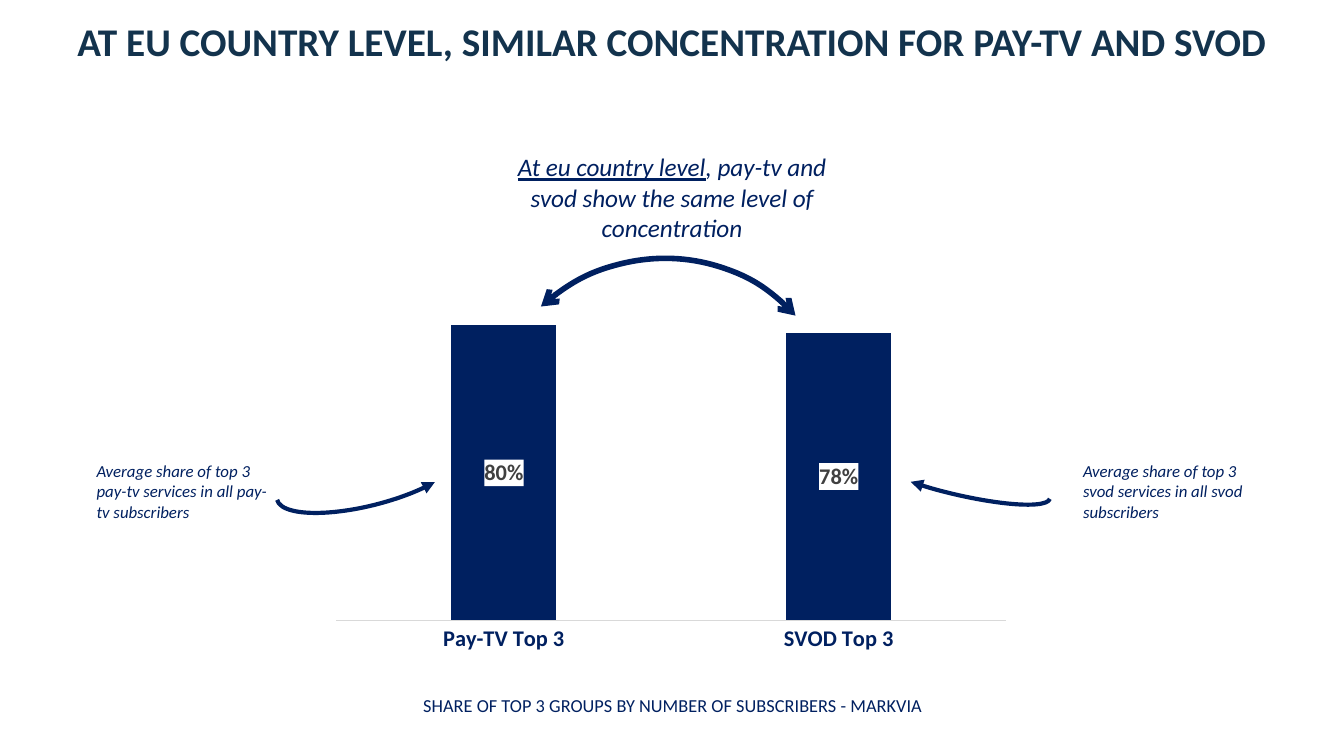
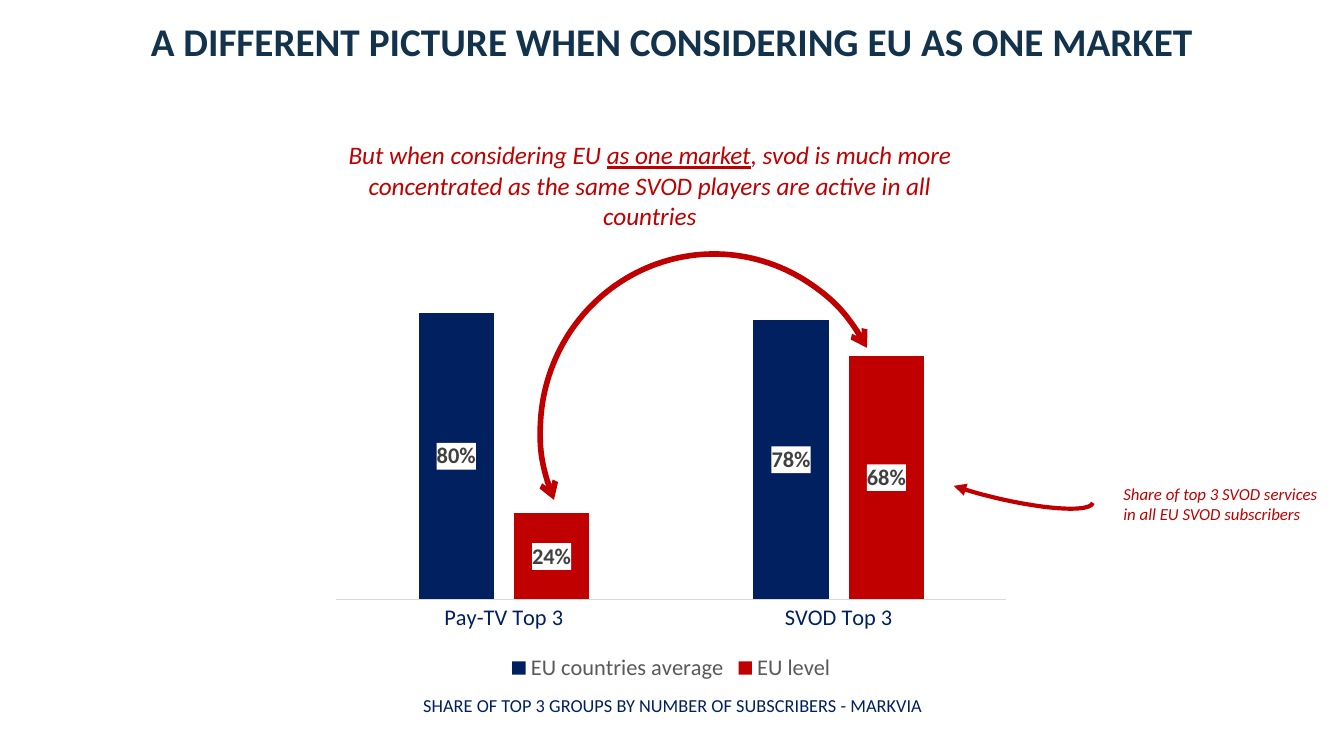
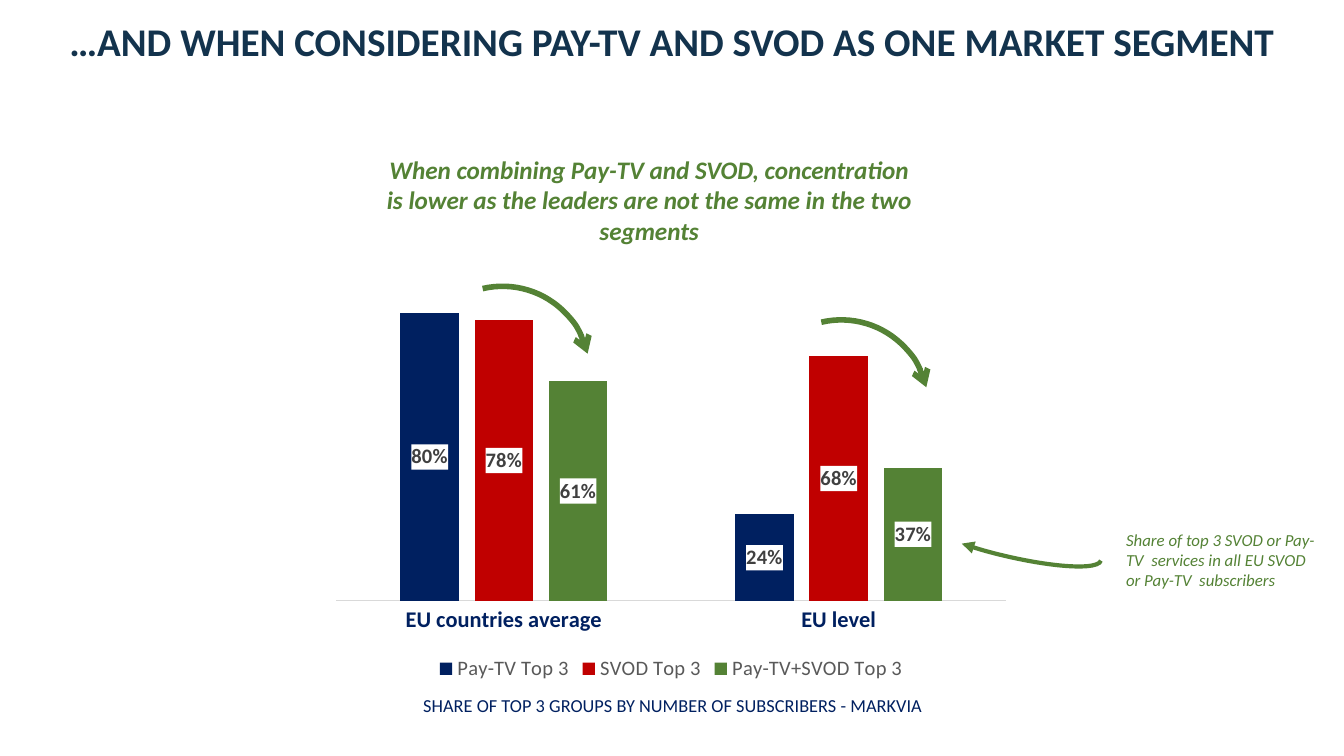
import collections

import lxml.etree
import pptx
import pptx.chart.data
import pptx.dml.color
import pptx.enum.chart
import pptx.enum.shapes
import pptx.enum.text
import pptx.oxml
import pptx.oxml.ns
import pptx.util

NAVY = pptx.dml.color.RGBColor(0x00, 0x20, 0x60)
RED = pptx.dml.color.RGBColor(0xC0, 0x00, 0x00)
GREEN = pptx.dml.color.RGBColor(0x54, 0x82, 0x35)
TITLE_BLUE = pptx.dml.color.RGBColor(0x13, 0x33, 0x4D)
LABEL_GREY = pptx.dml.color.RGBColor(0x40, 0x40, 0x40)
LEGEND_GREY = pptx.dml.color.RGBColor(0x59, 0x59, 0x59)
AXIS_GREY = pptx.dml.color.RGBColor(0xD9, 0xD9, 0xD9)
WHITE = pptx.dml.color.RGBColor(0xFF, 0xFF, 0xFF)

FONT = "Calibri"
EMU_PER_PX = 4572
CENTER = pptx.enum.text.PP_ALIGN.CENTER
LEFT = pptx.enum.text.PP_ALIGN.LEFT
SERIES_COLORS = (NAVY, RED, GREEN)
SWEEP = (119.491, 0)

Box = collections.namedtuple("Box", "left top width height")
Arc = collections.namedtuple("Arc", "box rotation angles flipped", defaults=(None, False))

SLIDE = Box(0, 0, 2000, 1125)
TITLE = Box(0, 16, 2000, 90)
FOOTER = Box(194, 1020, 1614, 60)
CHART = Box(480, 400, 1038, 622)


def px(length):
    """Turn a length in px into EMU."""
    return pptx.util.Emu(length * EMU_PER_PX)


def emu(box):
    """Turn a box in px into four EMU lengths."""
    return [px(length) for length in box]


def within(box, part):
    """Place a part relative to the corner of a box."""
    return Box(box.left + part.left, box.top + part.top, part.width, part.height)


def style_font(font, size, color, bold=False, italic=False):
    """Give a font its face, size, colour and weight."""
    font.name = FONT
    font.size = pptx.util.Pt(size)
    font.color.rgb = color
    font.bold = bold
    font.italic = italic


def write_runs(text_frame, runs, alignment, size, color, bold=False, italic=False):
    """Write one paragraph from (text, underlined) runs."""
    text_frame.word_wrap = True
    paragraph = text_frame.paragraphs[0]
    paragraph.alignment = alignment
    for text, underlined in runs:
        run = paragraph.add_run()
        run.text = text
        style_font(run.font, size, color, bold, italic)
        if underlined:
            run.font.underline = True


def add_title(slide, box, text):
    """Fill and place the title placeholder."""
    title = slide.shapes.title
    title.left, title.top, title.width, title.height = emu(box)
    write_runs(title.text_frame, [(text, False)], CENTER, 21, TITLE_BLUE, bold=True)
    title.text_frame.auto_size = pptx.enum.text.MSO_AUTO_SIZE.SHAPE_TO_FIT_TEXT
    title.text_frame.vertical_anchor = pptx.enum.text.MSO_ANCHOR.TOP


def add_text(slide, box, runs, alignment, size, color, bold=False):
    """Add an italic text box that grows with its text."""
    text_frame = slide.shapes.add_textbox(*emu(box)).text_frame
    write_runs(text_frame, runs, alignment, size, color, bold, italic=True)
    text_frame.auto_size = pptx.enum.text.MSO_AUTO_SIZE.SHAPE_TO_FIT_TEXT


def add_footer(slide, box):
    """Add the white band naming the measure and its provider."""
    band = slide.shapes.add_shape(pptx.enum.shapes.MSO_SHAPE.RECTANGLE, *emu(box))
    band.shadow.inherit = False
    band.fill.solid()
    band.fill.fore_color.rgb = WHITE
    band.line.color.rgb = WHITE
    band.line.width = pptx.util.Pt(0.25)
    text_frame = band.text_frame
    text_frame.margin_left = text_frame.margin_right = px(4)
    text_frame.margin_top = text_frame.margin_bottom = px(4)
    text_frame.vertical_anchor = pptx.enum.text.MSO_ANCHOR.MIDDLE
    text = "SHARE OF TOP 3 GROUPS BY NUMBER OF SUBSCRIBERS - MARKVIA"
    write_runs(text_frame, [(text, False)], CENTER, 9.8, NAVY)


def add_arc(slide, arc, color, weight, head=None, tail=None):
    """Add a curved arrow with the given ends."""
    shape = slide.shapes.add_shape(pptx.enum.shapes.MSO_SHAPE.ARC, *emu(arc.box))
    shape.shadow.inherit = False
    shape.fill.background()
    shape.line.color.rgb = color
    shape.line.width = pptx.util.Pt(weight)
    shape.rotation = arc.rotation
    for index, angle in enumerate(arc.angles or ()):
        shape.adjustments[index] = angle
    if arc.flipped:
        shape._element.spPr.get_or_add_xfrm().set("flipV", "1")
    line = shape.line._get_or_add_ln()
    for tag, kind in (("a:headEnd", head), ("a:tailEnd", tail)):
        if kind:
            lxml.etree.SubElement(line, pptx.oxml.ns.qn(tag)).set("type", kind)


def add_remark(slide, box, text, color, arc):
    """Add a small remark and its arrow, placed relative to the remark."""
    add_text(slide, box, [(text, False)], LEFT, 9, color)
    placed_arc = arc._replace(box=within(box, arc.box))
    add_arc(slide, placed_arc, color, 2.25, head="triangle")


def label_series(series, color, size):
    """Colour a series and show its values on white."""
    series.format.fill.solid()
    series.format.fill.fore_color.rgb = color
    labels = series.data_labels
    labels.show_value = True
    labels.number_format = "0%"
    labels.number_format_is_linked = False
    labels.position = pptx.enum.chart.XL_LABEL_POSITION.CENTER
    style_font(labels.font, size, LABEL_GREY, bold=True)
    background = pptx.oxml.parse_xml(
        f'<c:spPr {pptx.oxml.ns.nsdecls("c", "a")}><a:solidFill>'
        f'<a:srgbClr val="{WHITE}"/></a:solidFill></c:spPr>'
    )
    labels._element.find(pptx.oxml.ns.qn("c:txPr")).addprevious(background)


def add_share_chart(slide, box, categories, shares, size=12, bold_categories=True):
    """Add the column chart, with a legend when it has several series."""
    chart_data = pptx.chart.data.CategoryChartData(number_format="0%")
    chart_data.categories = categories
    for name, values in shares.items():
        chart_data.add_series(name, values)
    chart_type = pptx.enum.chart.XL_CHART_TYPE.COLUMN_CLUSTERED
    chart = slide.shapes.add_chart(chart_type, *emu(box), chart_data).chart
    chart.has_title = False
    chart.font.name = FONT
    chart.font.size = pptx.util.Pt(size)

    plot = chart.plots[0]
    plot.vary_by_categories = False
    plot.gap_width = 219
    plot.overlap = -27
    for series, color in zip(plot.series, SERIES_COLORS):
        label_series(series, color, size)

    category_axis = chart.category_axis
    category_axis.major_tick_mark = pptx.enum.chart.XL_TICK_MARK.NONE
    category_axis.format.line.color.rgb = AXIS_GREY
    category_axis.format.line.width = pptx.util.Pt(0.75)
    style_font(category_axis.tick_labels.font, 12, NAVY, bold_categories)
    value_axis = chart.value_axis
    value_axis.visible = False
    value_axis.has_major_gridlines = False
    value_axis.minimum_scale = 0

    chart.has_legend = len(shares) > 1
    if chart.has_legend:
        chart.legend.position = pptx.enum.chart.XL_LEGEND_POSITION.BOTTOM
        chart.legend.include_in_layout = False
        style_font(chart.legend.font, size, LEGEND_GREY)


def start_slide(presentation, title):
    """Add a slide with the shared title and footer."""
    slide = presentation.slides.add_slide(presentation.slide_layouts[5])
    add_title(slide, TITLE, title)
    return slide


def add_country_slide(presentation):
    """Compare pay-TV and SVOD at country level."""
    slide = start_slide(
        presentation, "AT EU COUNTRY LEVEL, SIMILAR CONCENTRATION FOR PAY-TV AND SVOD"
    )
    chart_box = CHART._replace(top=418, height=564)
    add_share_chart(
        slide, chart_box, ("Pay-TV Top 3", "SVOD Top 3"), {"Series 1": (0.8, 0.78)}
    )
    add_arc(slide, Arc(Box(710, 388, 544, 528), 317.9), NAVY, 3, "arrow", "arrow")
    headline = [
        ("At eu country level", True),
        (", pay-tv and svod show the same level of concentration", False),
    ]
    add_text(slide, Box(718, 216, 564, 156), headline, CENTER, 13.5, NAVY)
    add_footer(slide, FOOTER)
    add_remark(
        slide, Box(1592, 676, 302, 112),
        "Average share of top 3 svod services in all svod subscribers",
        NAVY, Arc(Box(-308, 8, 282, 52), 13.3, SWEEP, True),
    )
    add_remark(
        slide, Box(124, 676, 302, 112),
        "Average share of top 3 pay-tv services in all pay-tv subscribers",
        NAVY, Arc(Box(284, -10, 282, 86), 165.7, SWEEP),
    )


def add_market_slide(presentation):
    """Compare country averages with the EU as one market."""
    slide = start_slide(
        presentation, "A DIFFERENT PICTURE WHEN CONSIDERING EU AS ONE MARKET"
    )
    shares = {"EU countries average": (0.8, 0.78), "EU level": (0.24, 0.68)}
    add_share_chart(
        slide, CHART, ("Pay-TV Top 3", "SVOD Top 3"), shares, bold_categories=False
    )
    arc = Arc(Box(804, 378, 516, 526), 3.3, (91.964, 196.973))
    add_arc(slide, arc, RED, 3, "arrow", "arrow")
    headline = [
        ("But when considering EU ", False),
        ("as one market", True),
        (", svod is much more concentrated as the same SVOD players"
         " are active in all countries", False),
    ]
    add_text(slide, Box(480, 198, 974, 156), headline, CENTER, 13.5, RED)
    add_remark(
        slide, Box(1652, 710, 344, 80),
        "Share of top 3 SVOD services in all EU SVOD subscribers",
        RED, Arc(Box(-304, -20, 282, 52), 13.3, SWEEP, True),
    )
    add_footer(slide, FOOTER)


def add_segment_slide(presentation):
    """Compare both segments with their combination."""
    slide = start_slide(
        presentation, "…AND WHEN CONSIDERING PAY-TV AND SVOD AS ONE MARKET SEGMENT"
    )
    shares = {
        "Pay-TV Top 3": (0.8, 0.24),
        "SVOD Top 3": (0.78, 0.68),
        "Pay-TV+SVOD Top 3": (0.61, 0.37),
    }
    add_share_chart(slide, CHART, ("EU countries average", "EU level"), shares, size=11)
    for left, top in ((1122, 476), (618, 426)):
        add_arc(slide, Arc(Box(left, top, 260, 260), 346.8), GREEN, 3, tail="arrow")
    headline = [
        ("When combining Pay-TV and SVOD, concentration is lower as the leaders"
         " are not the same in the two segments", False),
    ]
    add_text(slide, Box(554, 220, 824, 156), headline, CENTER, 13.5, GREEN, bold=True)
    add_remark(
        slide, Box(1656, 778, 330, 112),
        "Share of top 3 SVOD or Pay-TV  services in all EU SVOD or Pay-TV  subscribers",
        GREEN, Arc(Box(-296, -2, 282, 52), 13.3, SWEEP, True),
    )
    add_footer(slide, FOOTER)


def main():
    """Build and save the presentation."""
    presentation = pptx.Presentation()
    presentation.slide_width = px(SLIDE.width)
    presentation.slide_height = px(SLIDE.height)
    add_country_slide(presentation)
    add_market_slide(presentation)
    add_segment_slide(presentation)
    presentation.save("out.pptx")


if __name__ == "__main__":
    main()
